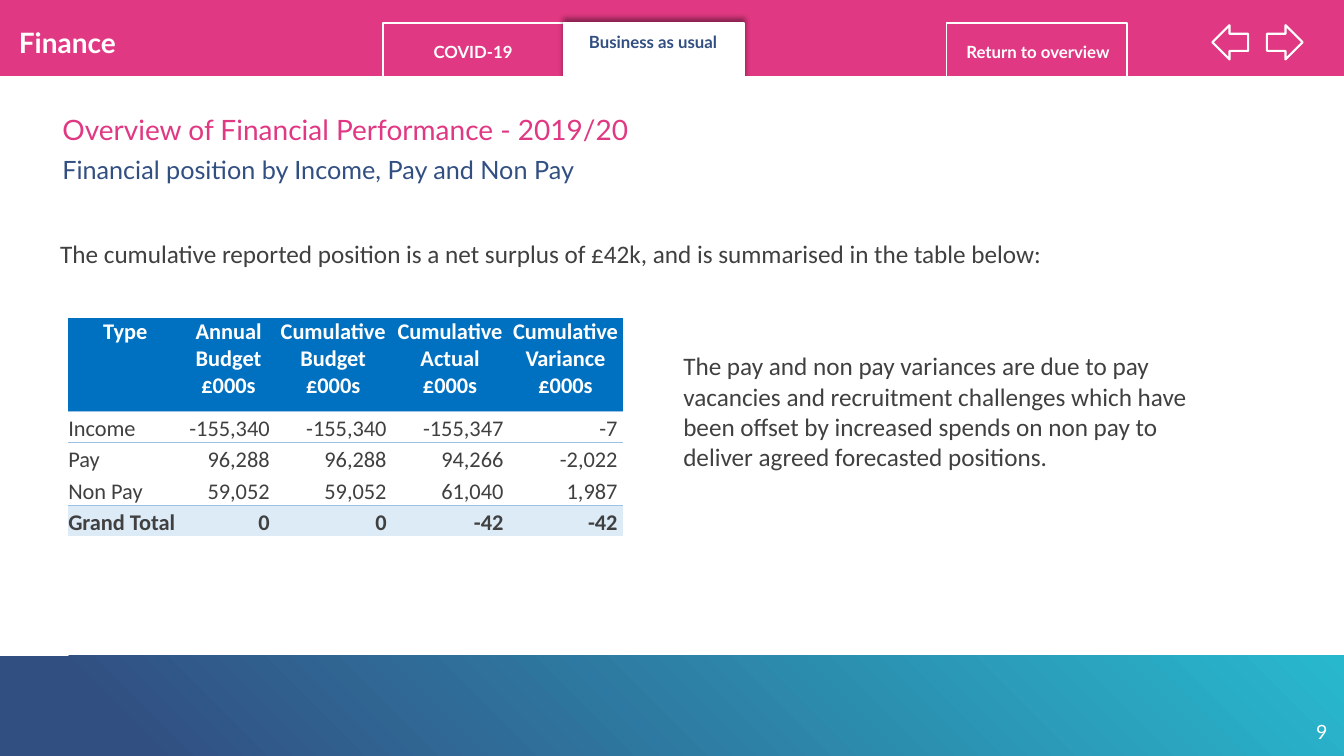
from dataclasses import dataclass

from lxml import etree
from pptx import Presentation
from pptx.dml.color import RGBColor
from pptx.enum.shapes import MSO_SHAPE
from pptx.enum.text import MSO_ANCHOR, PP_ALIGN
from pptx.oxml import parse_xml
from pptx.oxml.ns import nsdecls, qn
from pptx.util import Pt

RECTANGLE = MSO_SHAPE.RECTANGLE
ARROW = MSO_SHAPE.RIGHT_ARROW
LEFT, CENTER, RIGHT = PP_ALIGN.LEFT, PP_ALIGN.CENTER, PP_ALIGN.RIGHT
TOP, BOTTOM = MSO_ANCHOR.TOP, MSO_ANCHOR.BOTTOM


@dataclass(frozen=True)
class Theme:
    pink: str = "E03882"
    navy: str = "324F82"
    teal: str = "28B8CE"
    white: str = "FFFFFF"
    black: str = "000000"
    ink: str = "404040"
    header: str = "0070C0"
    total: str = "DDEBF7"
    rule: str = "9BC2E6"
    heading_font: str = "Lato"
    body_font: str = "Calibri"
    title: int = 20
    body: int = 18
    table: int = 16
    number: int = 14
    tab: int = 12


theme = Theme()
deck = Presentation()
deck.slide_width, deck.slide_height = Pt(960), Pt(540)
page = deck.slides.add_slide(deck.slide_layouts[6])


def add_panel(kind, left, top, width, height, fill=None, line=None, weight=1):
    panel = page.shapes.add_shape(kind, Pt(left), Pt(top), Pt(width), Pt(height))
    panel.shadow.inherit = False
    if fill:
        panel.fill.solid()
        panel.fill.fore_color.rgb = RGBColor.from_string(fill)
    else:
        panel.fill.background()
    if line:
        panel.line.color.rgb = RGBColor.from_string(line)
        panel.line.width = Pt(weight)
    else:
        panel.line.fill.background()
    return panel


def write(frame, words, font, size, color, bold=False, align=LEFT):
    frame.text = words
    para = frame.paragraphs[0]
    para.alignment = align
    span = para.runs[0]
    span.font.name = font
    span.font.size = Pt(size)
    span.font.bold = bold
    span.font.color.rgb = RGBColor.from_string(color)


footer = add_panel(RECTANGLE, 0, 468.5, 960, 71.5)
footer.fill.gradient()
footer.fill.gradient_angle = 45
for stop, color, position in zip(
    footer.fill.gradient_stops, (theme.navy, theme.teal), (0.1, 1)
):
    stop.color.rgb = RGBColor.from_string(color)
    stop.position = position

add_panel(RECTANGLE, 0, 0, 960, 60, theme.pink)
for left, fill in ((273.5, None), (402.5, theme.white), (676, None)):
    tab = add_panel(RECTANGLE, left, 16.5, 129, 76.5, fill, theme.white)
    if fill:
        effects = tab._element.spPr.find(qn("a:effectLst"))
        shadow = etree.SubElement(
            effects, qn("a:outerShdw"), blurRad=str(Pt(4)), dist=str(Pt(3)),
            dir="16200000", algn="b", rotWithShape="0",
        )
        tint = etree.SubElement(shadow, qn("a:srgbClr"), val=theme.black)
        etree.SubElement(tint, qn("a:alpha"), val="40000")
add_panel(RECTANGLE, 0, 54.5, 960, 105, theme.white, theme.white)

for left, rotation in ((866, 180), (905, 0)):
    arrow = add_panel(ARROW, left, 18, 25.5, 24.5, line=theme.white, weight=1.5)
    arrow.rotation = rotation

heading, body = theme.heading_font, theme.body_font
tight, padded = (0, 0), (7.2, 3.6)
texts = (
    (13.5, 18, 244, 24, tight, "Finance",
     heading, theme.title, theme.white, True, LEFT),
    (286, 30, 104, 14.5, tight, "COVID-19",
     heading, theme.tab, theme.white, True, CENTER),
    (414.5, 22.5, 104, 29, tight, "Business as usual",
     heading, theme.tab, theme.navy, True, CENTER),
    (665.5, 30, 152, 14.5, tight, "Return to overview",
     heading, theme.tab, theme.white, True, CENTER),
    (37.5, 77, 670, 31.5, padded, "Overview of Financial Performance - 2019/20",
     heading, theme.title, theme.pink, False, LEFT),
    (37.5, 106.5, 670, 29, padded, "Financial position by Income, Pay and Non Pay",
     heading, theme.body, theme.navy, False, LEFT),
    (43, 170.5, 847.5, 63.5, tight,
     "The cumulative reported position is a net surplus of £42k, "
     "and is summarised in the table below:",
     body, theme.body, theme.ink, False, LEFT),
    (481, 247, 393, 152.5, padded,
     "The pay and non pay variances are due to pay vacancies and recruitment "
     "challenges which have been offset by increased spends on non pay to "
     "deliver agreed forecasted positions.",
     body, theme.body, theme.ink, False, LEFT),
    (933, 510.5, 27, 24.5, padded, "9",
     heading, theme.number, theme.white, False, LEFT),
)
for left, top, width, height, (side, edge), words, *style in texts:
    box = page.shapes.add_textbox(Pt(left), Pt(top), Pt(width), Pt(height))
    frame = box.text_frame
    frame.word_wrap = True
    frame.margin_left = frame.margin_right = Pt(side)
    frame.margin_top = frame.margin_bottom = Pt(edge)
    write(frame, words, *style)

rows = (
    ("Type", "Annual Budget £000s", "Cumulative Budget £000s",
     "Cumulative Actual £000s", "Cumulative Variance £000s"),
    ("Income", "-155,340", "-155,340", "-155,347", "-7"),
    ("Pay", "96,288", "96,288", "94,266", "-2,022"),
    ("Non Pay", "59,052", "59,052", "61,040", "1,987"),
    ("Grand Total", "0", "0", "-42", "-42"),
)
column_widths = (81.5, 66, 83.5, 83.5, 81.5)
row_heights = (67, 22.3, 22.3, 22.3, 22.3)
last = len(rows) - 1
table = page.shapes.add_table(
    len(rows), len(column_widths), Pt(48.75), Pt(227),
    Pt(sum(column_widths)), Pt(sum(row_heights)),
).table
table.first_row = table.horz_banding = False
table._tbl.tblPr.find(qn("a:tableStyleId")).text = (
    "{2D5ABB26-0587-4C30-8999-92F81FD0307C}"
)
for column, width in zip(table.columns, column_widths):
    column.width = Pt(width)
for row, height in zip(table.rows, row_heights):
    row.height = Pt(height)

row_fills = {0: theme.header, last: theme.total}
row_borders = {0: ("lnB",), 1: ("lnT",), last - 1: ("lnB",), last: ("lnT",)}
for row_index, values in enumerate(rows):
    is_header = row_index == 0
    for column_index, value in enumerate(values):
        cell = table.cell(row_index, column_index)
        is_number = not is_header and column_index > 0
        cell.margin_left = cell.margin_top = cell.margin_bottom = 0
        cell.margin_right = Pt(3.6 if is_number else 0)
        cell.vertical_anchor = TOP if is_header else BOTTOM
        align = CENTER if is_header else RIGHT if is_number else LEFT
        color = theme.white if is_header else theme.ink
        write(cell.text_frame, value, body, theme.table, color,
              row_index in row_fills, align)
        for side in row_borders.get(row_index, ()):
            cell._tc.get_or_add_tcPr().append(parse_xml(
                f'<a:{side} {nsdecls("a")} w="{Pt(0.5)}"><a:solidFill>'
                f'<a:srgbClr val="{theme.rule}"/></a:solidFill></a:{side}>'
            ))
        if row_index in row_fills:
            cell.fill.solid()
            cell.fill.fore_color.rgb = RGBColor.from_string(row_fills[row_index])
        else:
            cell.fill.background()

deck.save("out.pptx")
